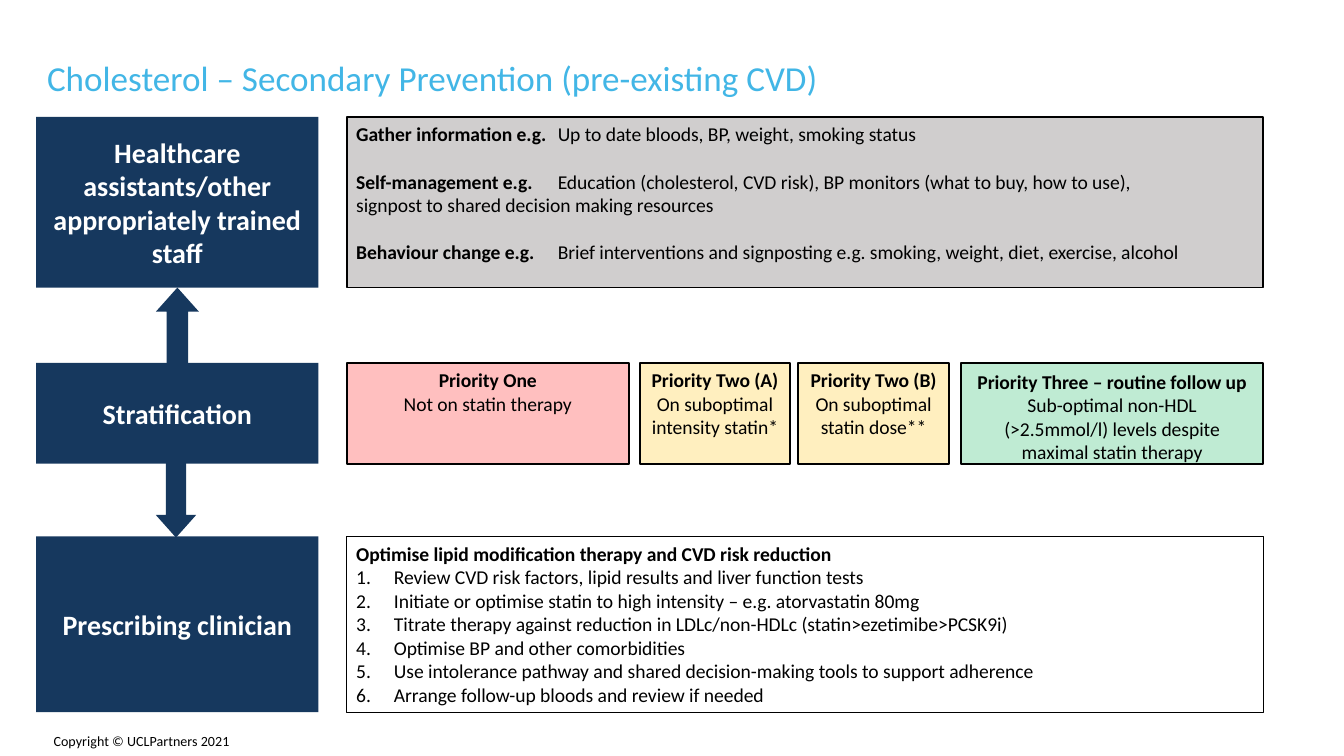
"""Build the slide on cholesterol management in secondary prevention."""
import dataclasses

import pptx
import pptx.dml.color
import pptx.enum.shapes
import pptx.enum.text
import pptx.oxml.xmlchemy
import pptx.util
import lxml.etree

Pt = pptx.util.Pt
RGB = pptx.dml.color.RGBColor.from_string
ALIGN = pptx.enum.text.PP_ALIGN
ANCHOR = pptx.enum.text.MSO_ANCHOR
SHAPE = pptx.enum.shapes.MSO_SHAPE
NAMESPACE = "{http://schemas.openxmlformats.org/drawingml/2006/main}"


@dataclasses.dataclass(frozen=True)
class Theme:
    font: str = "Calibri"
    title: str = "42B6E6"
    navy: str = "16385E"
    white: str = "FFFFFF"
    black: str = "000000"
    grey: str = "D0CECE"
    red: str = "FF0000"
    amber: str = "FFC000"
    green: str = "00B050"
    title_size: float = 18.8
    role_size: float = 15
    body_size: float = 10.5
    copyright_size: float = 7.5


theme = Theme()


def add_block(kind, left, top, width, height, fill=None, line=None):
    shape = slide.shapes.add_shape(kind, Pt(left), Pt(top), Pt(width), Pt(height))
    shape.shadow.inherit = False
    if fill:
        shape.fill.solid()
        shape.fill.fore_color.rgb = RGB(fill)
    else:
        shape.fill.background()
    if line:
        shape.line.color.rgb = RGB(theme.black)
        shape.line.width = Pt(line)
    else:
        shape.line.fill.background()
    return shape


def write_text(shape, lines, size, color, align=ALIGN.LEFT, anchor=ANCHOR.TOP, inset=(5.04, 2.88)):
    frame = shape.text_frame
    frame.word_wrap = True
    frame.vertical_anchor = anchor
    frame.margin_left = frame.margin_right = Pt(inset[0])
    frame.margin_top = frame.margin_bottom = Pt(inset[1])
    for index, (text, bold) in enumerate(lines):
        paragraph = frame.add_paragraph() if index else frame.paragraphs[0]
        paragraph.text = text
        paragraph.alignment = align
        paragraph.font.name = theme.font
        paragraph.font.size = Pt(size)
        paragraph.font.bold = bold
        paragraph.font.color.rgb = RGB(color)
    return frame


presentation = pptx.Presentation()
presentation.slide_width = Pt(720)
presentation.slide_height = Pt(405)
slide = presentation.slides.add_slide(presentation.slide_layouts[6])

title = slide.shapes.add_textbox(Pt(25.2), Pt(25.2), Pt(586), Pt(32.4))
write_text(title, [("Cholesterol – Secondary Prevention (pre-existing CVD)", False)],
           theme.title_size, theme.title, anchor=ANCHOR.MIDDLE, inset=(0, 0))

copyright_line = slide.shapes.add_textbox(Pt(21.6), Pt(388.8), Pt(120), Pt(16.5))
write_text(copyright_line, [("Copyright © UCLPartners 2021", False)],
           theme.copyright_size, theme.black, inset=(7.2, 3.6))

role_left, role_width = 19.44, 151.2
panel_left, panel_width = 185.76, 491.04
rows = [(62.64, 91.44), (194.4, 54), (287.28, 94.32)]
roles = ["Healthcare assistants/other appropriately trained staff", "Stratification", "Prescribing clinician"]
for role, (top, height) in zip(roles, rows):
    block = add_block(SHAPE.RECTANGLE, role_left, top, role_width, height, theme.navy)
    write_text(block, [(role, True)], theme.role_size, theme.white, ALIGN.CENTER, ANCHOR.MIDDLE)

arrows = [(SHAPE.UP_ARROW, 83.52, 154.08, 23.04, 40.32), (SHAPE.DOWN_ARROW, 83.52, 243.36, 21.6, 44.64)]
for kind, left, top, width, height in arrows:
    arrow = add_block(kind, left, top, width, height, theme.navy)
    arrow.adjustments[1] = 0.56

activities = [
    ("Gather information e.g.", "Up to date bloods, BP, weight, smoking status"),
    ("Self-management e.g.", "Education (cholesterol, CVD risk), BP monitors (what to buy, how to use),"
     "\vsignpost to shared decision making resources"),
    ("Behaviour change e.g.",
     "Brief interventions and signposting e.g. smoking, weight, diet, exercise, alcohol"),
]
top, height = rows[0]
panel = add_block(SHAPE.RECTANGLE, panel_left, top, panel_width, height, theme.grey, 1)
frame = panel.text_frame
for index, (heading, detail) in enumerate(activities):
    paragraph = frame.add_paragraph() if index else frame.paragraphs[0]
    properties = paragraph._p.get_or_add_pPr()
    tabs = lxml.etree.SubElement(properties, NAMESPACE + "tabLst")
    lxml.etree.SubElement(tabs, NAMESPACE + "tab", pos=str(Pt(108)), algn="l")
    paragraph.text = f"{heading}\t"
    paragraph.runs[0].font.bold = True
    for part, words in enumerate(detail.split("\v")):
        if part:
            paragraph.add_line_break()
        paragraph.add_run().text = words
    paragraph.alignment = ALIGN.LEFT
    paragraph.space_before = Pt(12.7 if index else 0)
    paragraph.font.name = theme.font
    paragraph.font.size = Pt(theme.body_size)
    paragraph.font.color.rgb = RGB(theme.black)
write_text(panel, [], theme.body_size, theme.black)

priorities = [
    (185.76, 151.2, theme.red, "Priority One", "Not on statin therapy", (5.04, 2.88)),
    (342.72, 80.64, theme.amber, "Priority Two (A)", "On suboptimal intensity statin*", (5.04, 2.88)),
    (427.68, 80.64, theme.amber, "Priority Two (B)", "On suboptimal statin dose**", (5.04, 2.88)),
    (514.8, 162, theme.green, "Priority Three – routine follow up",
     "Sub-optimal non-HDL (>2.5mmol/l) levels despite maximal statin therapy", (7.2, 3.6)),
]
for left, width, color, heading, detail, inset in priorities:
    card = add_block(SHAPE.RECTANGLE, left, rows[1][0], width, 54.4, color, 1)
    fill_color = card._element.spPr.find(f"{NAMESPACE}solidFill/{NAMESPACE}srgbClr")
    lxml.etree.SubElement(fill_color, NAMESPACE + "alpha", val="25000")
    write_text(card, [(heading, True), (detail, False)], theme.body_size, theme.black, ALIGN.CENTER, inset=inset)

steps = [
    "Review CVD risk factors, lipid results and liver function tests",
    "Initiate or optimise statin to high intensity – e.g. atorvastatin 80mg",
    "Titrate therapy against reduction in LDLc/non-HDLc (statin>ezetimibe>PCSK9i)",
    "Optimise BP and other comorbidities",
    "Use intolerance pathway and shared decision-making tools to support adherence",
    "Arrange follow-up bloods and review if needed",
]
top, height = rows[2]
panel = add_block(SHAPE.RECTANGLE, panel_left, top, panel_width, height, line=0.75)
lines = [("Optimise lipid modification therapy and CVD risk reduction", True)]
frame = write_text(panel, lines + [(step, False) for step in steps], theme.body_size, theme.black)
for paragraph in frame.paragraphs[1:]:
    properties = paragraph._p.get_or_add_pPr()
    properties.set("marL", str(Pt(20.25)))
    properties.set("indent", str(Pt(-20.25)))
    numbering = lxml.etree.Element(NAMESPACE + "buAutoNum", type="arabicPeriod")
    properties.insert(0, numbering)

presentation.save("out.pptx")
